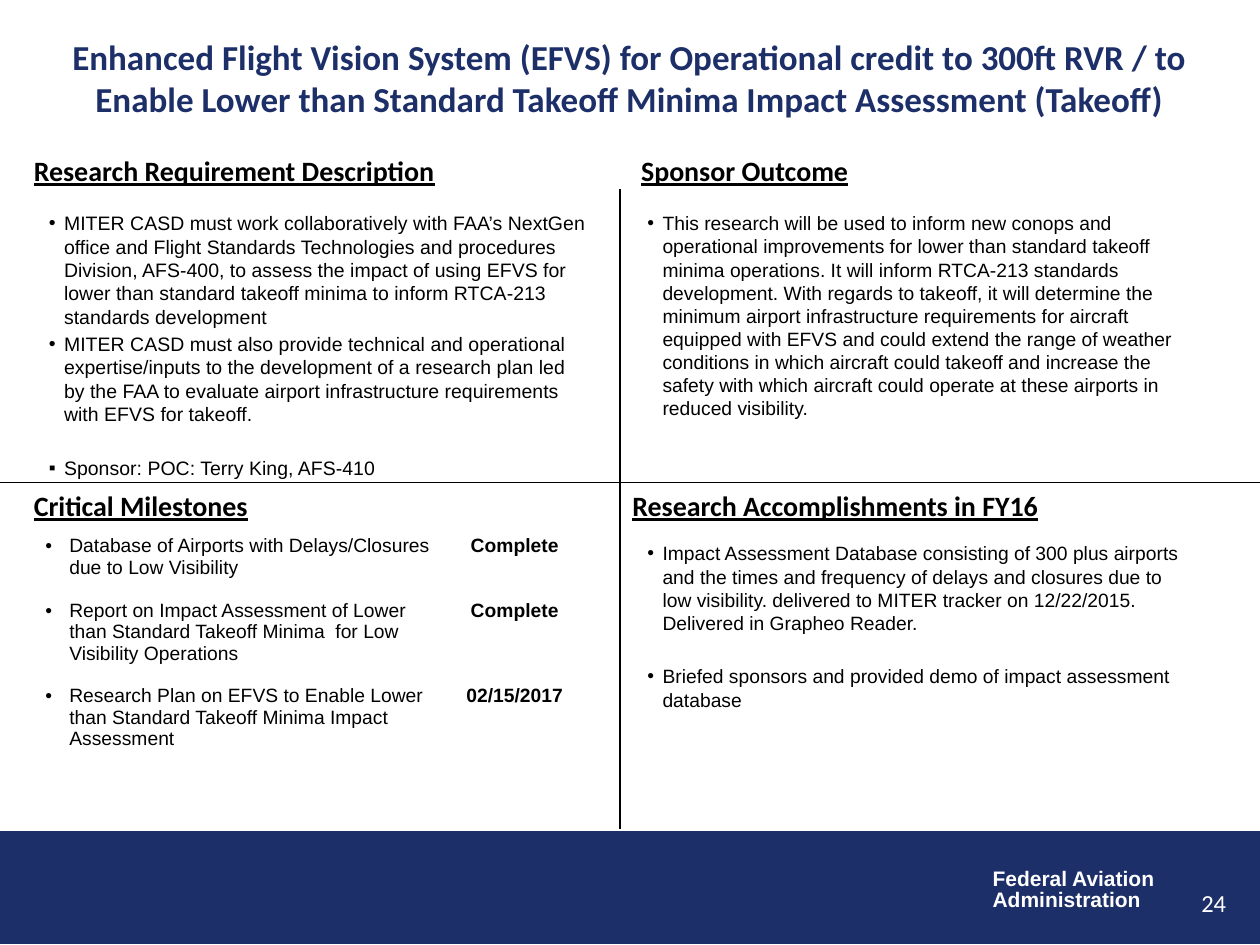
from lxml import etree
from pptx import Presentation
from pptx.dml.color import RGBColor
from pptx.enum import shapes, text
from pptx.oxml.ns import qn
from pptx.util import Inches, Pt

NAVY = RGBColor(0x1D, 0x2F, 0x68)
BLACK = RGBColor(0, 0, 0)
WHITE = RGBColor(0xFF, 0xFF, 0xFF)

MARGIN = 0.29
COLUMN = 5.04
DIVIDER_X = 4.92
DIVIDER_Y = 3.83
BODY_SIZE = (4.5, 2.2)
BLANK_LINE = 17.5

DESCRIPTION = [
    ("•", "MITER CASD must work collaboratively with FAA’s NextGen office and Flight "
     "Standards Technologies and procedures Division, AFS-400, to assess the impact of "
     "using EFVS for lower than standard takeoff minima to inform RTCA-213 standards "
     "development", 0),
    ("•", "MITER CASD must also provide technical and operational expertise/inputs to the "
     "development of a research plan led by the FAA to evaluate airport infrastructure "
     "requirements with EFVS for takeoff.", 2.2),
    ("▪", "Sponsor: POC: Terry King, AFS-410", BLANK_LINE),
]
OUTCOME = [
    ("•", "This research will be used to inform new conops and operational improvements for "
     "lower than standard takeoff minima operations. It will inform RTCA-213 standards "
     "development. With regards to takeoff, it will determine the minimum airport "
     "infrastructure requirements for aircraft equipped with EFVS and could extend the "
     "range of weather conditions in which aircraft could takeoff and increase the safety "
     "with which aircraft could operate at these airports in reduced visibility.", 0),
]
ACCOMPLISHMENTS = [
    ("•", "Impact Assessment Database consisting of 300 plus airports and the times and "
     "frequency of delays and closures due to low visibility. delivered to MITER tracker "
     "on 12/22/2015. Delivered in Grapheo Reader.", 0),
    ("•", "Briefed sponsors and provided demo of impact assessment database", BLANK_LINE),
]
# Milestone, status, row height
MILESTONES = [
    ("Database of Airports with Delays/Closures due to Low Visibility", "Complete", 0.51),
    ("Report on Impact Assessment of Lower than Standard Takeoff Minima  for Low "
     "Visibility Operations", "Complete", 0.68),
    ("Research Plan on EFVS to Enable Lower than Standard Takeoff Minima Impact "
     "Assessment", "02/15/2017", 0.64),
]


def inches(*lengths):
    return [Inches(length) for length in lengths]


def style(paragraph, size, name="Arial", color=BLACK, bold=False):
    font = paragraph.font
    font.size, font.name, font.bold = Pt(size), name, bold
    font.color.rgb = color


def add_bullet(paragraph, mark, indent):
    properties = paragraph._p.get_or_add_pPr()
    properties.set("marL", str(Inches(indent)))
    properties.set("indent", str(-Inches(indent)))
    etree.SubElement(properties, qn("a:buFont"), typeface="Arial")
    etree.SubElement(properties, qn("a:buChar"), char=mark)


def add_text_frame(slide, box):
    frame = slide.shapes.add_textbox(*inches(*box)).text_frame
    frame.word_wrap = True
    return frame


def add_title(slide, box, wording):
    title = slide.shapes.title
    title.left, title.top, title.width, title.height = inches(*box)
    frame = title.text_frame
    frame.text = wording
    frame.vertical_anchor = text.MSO_ANCHOR.MIDDLE
    paragraph = frame.paragraphs[0]
    paragraph.alignment = text.PP_ALIGN.CENTER
    style(paragraph, 20, "Calibri", NAVY, True)


def add_heading(slide, box, wording):
    paragraph = add_text_frame(slide, box).paragraphs[0]
    paragraph.text = wording
    style(paragraph, 16, "Calibri", bold=True)
    paragraph.font.underline = True


def add_bullets(slide, box, items, size=11):
    frame = add_text_frame(slide, box)
    for index, (mark, wording, space) in enumerate(items):
        paragraph = frame.add_paragraph() if index else frame.paragraphs[0]
        paragraph.text = wording
        paragraph.space_before = Pt(space)
        add_bullet(paragraph, mark, 0.12)
        style(paragraph, size)


def add_milestones(slide, box, widths=(3.21, 1.17)):
    table = slide.shapes.add_table(len(MILESTONES), len(widths), *inches(*box)).table
    table.first_row = table.horz_banding = False
    for column, width in zip(table.columns, widths):
        column.width = Inches(width)
    for row, (milestone, status, height) in zip(table.rows, MILESTONES):
        row.height = Inches(height)
        for cell, wording, inset in zip(row.cells, (milestone, status), (0.07, 0)):
            cell.fill.background()
            cell.margin_left = cell.margin_right = Inches(inset)
            cell.margin_top = cell.margin_bottom = 0
            paragraph = cell.text_frame.paragraphs[0]
            paragraph.text = wording
            if wording is milestone:
                add_bullet(paragraph, "•", 0.19)
            else:
                paragraph.alignment = text.PP_ALIGN.CENTER
            style(paragraph, 11, bold=wording is status)


def add_divider(slide, start, end):
    line = slide.shapes.add_connector(
        shapes.MSO_CONNECTOR.STRAIGHT, *inches(*start, *end))
    line.line.color.rgb = BLACK
    line.line.width = Pt(0.75)
    etree.SubElement(line._element.spPr, qn("a:effectLst"))


def add_footer(slide, box):
    left, top, width, height = box
    band = slide.shapes.add_shape(shapes.MSO_SHAPE.RECTANGLE, *inches(*box))
    band.shadow.inherit = False
    band.fill.solid()
    band.fill.fore_color.rgb = band.line.color.rgb = NAVY
    band.line.width = Pt(0.75)

    agency = add_text_frame(slide, (left + 7.78, top + 0.25, 1.5, 0.44))
    agency.word_wrap = False
    agency.text = "Federal Aviation\nAdministration"
    for paragraph in agency.paragraphs:
        paragraph.line_spacing = 0.85
        style(paragraph, 12, color=WHITE, bold=True)

    number = add_text_frame(slide, (left + 7.5, top + 0.4, 2.33, 0.35)).paragraphs[0]
    number.text = "24"
    number.alignment = text.PP_ALIGN.RIGHT
    style(number, 14, "Calibri", WHITE)


def main():
    deck = Presentation()
    deck.slide_width, deck.slide_height = inches(10, 7.5)
    slide = deck.slides.add_slide(deck.slide_layouts[5])

    add_footer(slide, (0, 6.6, 10, 0.89))
    add_divider(slide, (DIVIDER_X, 1.5), (DIVIDER_X, 6.58))
    add_divider(slide, (0, DIVIDER_Y), (10, DIVIDER_Y))
    add_title(slide, (0.36, 0.15, 9.27, 0.93),
              "Enhanced Flight Vision System (EFVS) for Operational credit to 300ft RVR / to "
              "Enable Lower than Standard Takeoff Minima Impact Assessment (Takeoff)")

    add_heading(slide, (0.17, 1.17, 4.7, 0.38), "Research Requirement Description")
    add_heading(slide, (4.99, 1.17, 4.67, 0.38), "Sponsor Outcome")
    add_heading(slide, (0.17, DIVIDER_Y, 4.5, 0.38), "Critical Milestones")
    add_heading(slide, (DIVIDER_X, DIVIDER_Y, 4.42, 0.38), "Research Accomplishments in FY16")

    add_bullets(slide, (MARGIN, 1.63, *BODY_SIZE), DESCRIPTION, 11.1)
    add_bullets(slide, (COLUMN, 1.63, *BODY_SIZE), OUTCOME)
    add_milestones(slide, (MARGIN, 4.25, 4.38, 1.83))
    add_bullets(slide, (COLUMN, 4.25, *BODY_SIZE), ACCOMPLISHMENTS)
    deck.save("out.pptx")


if __name__ == "__main__":
    main()
